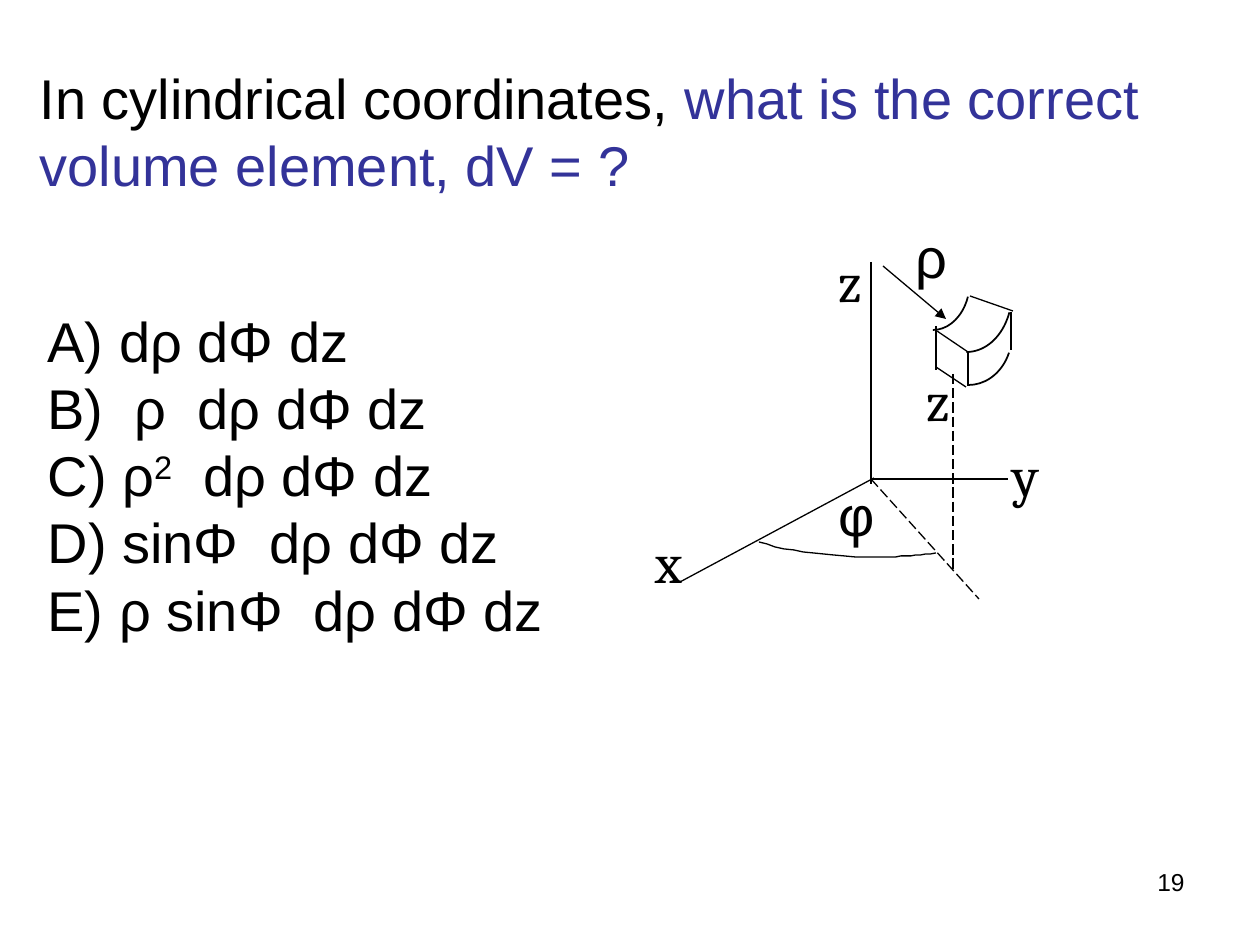
from lxml import etree
from pptx import Presentation
from pptx import util as u
from pptx.dml.color import RGBColor
from pptx.enum import dml, shapes, text
from pptx.oxml.ns import qn

SCALE = 914400 / 126
COLOURS = {"ink": "000000", "question": "333399"}


def px(length):
    return u.Emu(round(length * SCALE))


def curve(start, first, second, end, steps=12):
    points = []
    for step in range(1, steps + 1):
        t = step / steps
        weights = ((1 - t) ** 3, 3 * t * (1 - t) ** 2, 3 * t ** 2 * (1 - t), t ** 3)
        corners = (start, first, second, end)
        points.append(tuple(round(sum(w * c[axis] for w, c in zip(weights, corners)))
                            for axis in (0, 1)))
    return points


class Sketch:
    body_font = "Arial"
    axis_font = "Cambria"
    size = 32
    pitch = 38.4

    def __init__(self, page):
        self.page = page

    def colour(self, name):
        return RGBColor.from_string(COLOURS[name])

    def style(self, para, font=None, size=None):
        para.font.name = font or self.body_font
        para.font.size = u.Pt(size or self.size)
        para.font.color.rgb = self.colour("ink")

    def stroke(self, shape, width):
        shape.line.color.rgb = self.colour("ink")
        shape.line.width = u.Pt(width)

    def place(self, box, left, top, width, height):
        box.left, box.top, box.width, box.height = map(px, (left, top, width, height))
        frame = box.text_frame
        frame.auto_size = text.MSO_AUTO_SIZE.NONE
        frame.vertical_anchor = text.MSO_ANCHOR.TOP
        frame.word_wrap = True
        return frame

    def flow(self, para):
        para.alignment = text.PP_ALIGN.LEFT
        para.space_before = u.Pt(0)
        para.line_spacing = u.Pt(self.pitch)
        self.style(para)

    def title(self, parts, *area):
        para = self.place(self.page.shapes.title, *area).paragraphs[0]
        self.flow(para)
        for words, colour in parts:
            span = para.add_run()
            span.text = words
            span.font.color.rgb = self.colour(colour)

    def choices(self, items, *area):
        frame = self.place(self.page.placeholders[1], *area)
        for index, item in enumerate(items):
            para = frame.add_paragraph() if index else frame.paragraphs[0]
            self.flow(para)
            props = para._p.get_or_add_pPr()
            props.set("marL", "0")
            props.set("indent", "0")
            number = etree.Element(qn("a:buAutoNum"), type="alphaUcParenR")
            props.find(qn("a:defRPr")).addprevious(number)
            for place, words in enumerate(item.split("^")):
                span = para.add_run()
                span.text = words
                if place == 1:
                    span._r.get_or_add_rPr().set("baseline", "30000")

    def page_number(self, words, *area):
        box = self.page.shapes.add_textbox(*map(px, area))
        para = self.place(box, *area).paragraphs[0]
        para.text = words
        para.alignment = text.PP_ALIGN.RIGHT
        self.style(para, size=14)

    def label(self, words, font, left, top):
        box = self.page.shapes.add_textbox(*map(px, (left, top, 37, 58)))
        frame = box.text_frame
        frame.margin_left = frame.margin_right = 0
        frame.margin_top = frame.margin_bottom = 0
        frame.word_wrap = False
        frame.paragraphs[0].text = words
        self.style(frame.paragraphs[0], font)

    def line(self, *ends, dashed=False, arrow=False):
        line = self.page.shapes.add_connector(shapes.MSO_CONNECTOR.STRAIGHT, *map(px, ends))
        self.stroke(line, 0.75)
        if dashed:
            line.line.dash_style = dml.MSO_LINE.LONG_DASH
        if arrow:
            etree.SubElement(line.line._get_or_add_ln(), qn("a:tailEnd"), type="triangle")
        etree.SubElement(line._element.spPr, qn("a:effectLst"))

    def arc(self, *area):
        arc = self.page.shapes.add_shape(shapes.MSO_SHAPE.ARC, *map(px, area))
        arc.adjustments[1] = 201.49
        arc.rotation = 180
        arc._element.spPr.find(qn("a:xfrm")).set("flipH", "1")
        arc.shadow.inherit = False
        arc.fill.background()
        self.stroke(arc, 1)

    def outline(self, start, points):
        builder = self.page.shapes.build_freeform(*start, scale=SCALE)
        builder.add_line_segments(points, close=False)
        outline = builder.convert_to_shape()
        outline.shadow.inherit = False
        outline.fill.background()
        self.stroke(outline, 0.75)


def main():
    deck = Presentation()
    deck.slide_width, deck.slide_height = u.Inches(10), u.Inches(7.5)
    sketch = Sketch(deck.slides.add_slide(deck.slide_layouts[1]))

    sketch.title([("In cylindrical coordinates, ", "ink"),
                  ("what is the correct volume element, dV = ?", "question")],
                 27, 57, 1225, 149)
    sketch.choices([" dρ dΦ dz", "  ρ  dρ dΦ dz", " ρ^2^  dρ dΦ dz",
                    " sinΦ  dρ dΦ dz", " ρ sinΦ  dρ dΦ dz"], 35, 300, 748, 392)
    sketch.page_number("19", 903, 861, 294, 66)

    axes = [(871, 262, 871, 484), (871, 479, 1008, 479), (680, 582, 874, 478)]
    wedge_edges = [(1011, 312, 1011, 350), (968, 353, 968, 386), (970, 296, 1013, 311),
                   (937, 331, 968, 352), (936, 326, 936, 370), (936, 367, 966, 387)]
    for ends in axes + wedge_edges:
        sketch.line(*ends)
    for ends in [(871, 479, 979, 599), (953, 374, 953, 572)]:
        sketch.line(*ends, dashed=True)
    sketch.line(883, 266, 946, 319, arrow=True)

    for area in [(921, 234, 91, 118), (925, 284, 87, 101), (896, 232, 74, 98)]:
        sketch.arc(*area)
    start, middle = (759, 542), (876, 557)
    sketch.outline(start, curve(start, (790, 552), (833, 557), middle)
                   + curve(middle, (896, 557), (917, 556), (936, 553)))

    for words, left, top in [("x", 655, 527), ("y", 1012, 440),
                             ("z", 838, 246), ("z", 926, 365)]:
        sketch.label(words, sketch.axis_font, left, top)
    for words, left, top in [("ρ", 916, 223), ("φ", 839, 481)]:
        sketch.label(words, sketch.body_font, left, top)

    deck.save("out.pptx")


if __name__ == "__main__":
    main()
